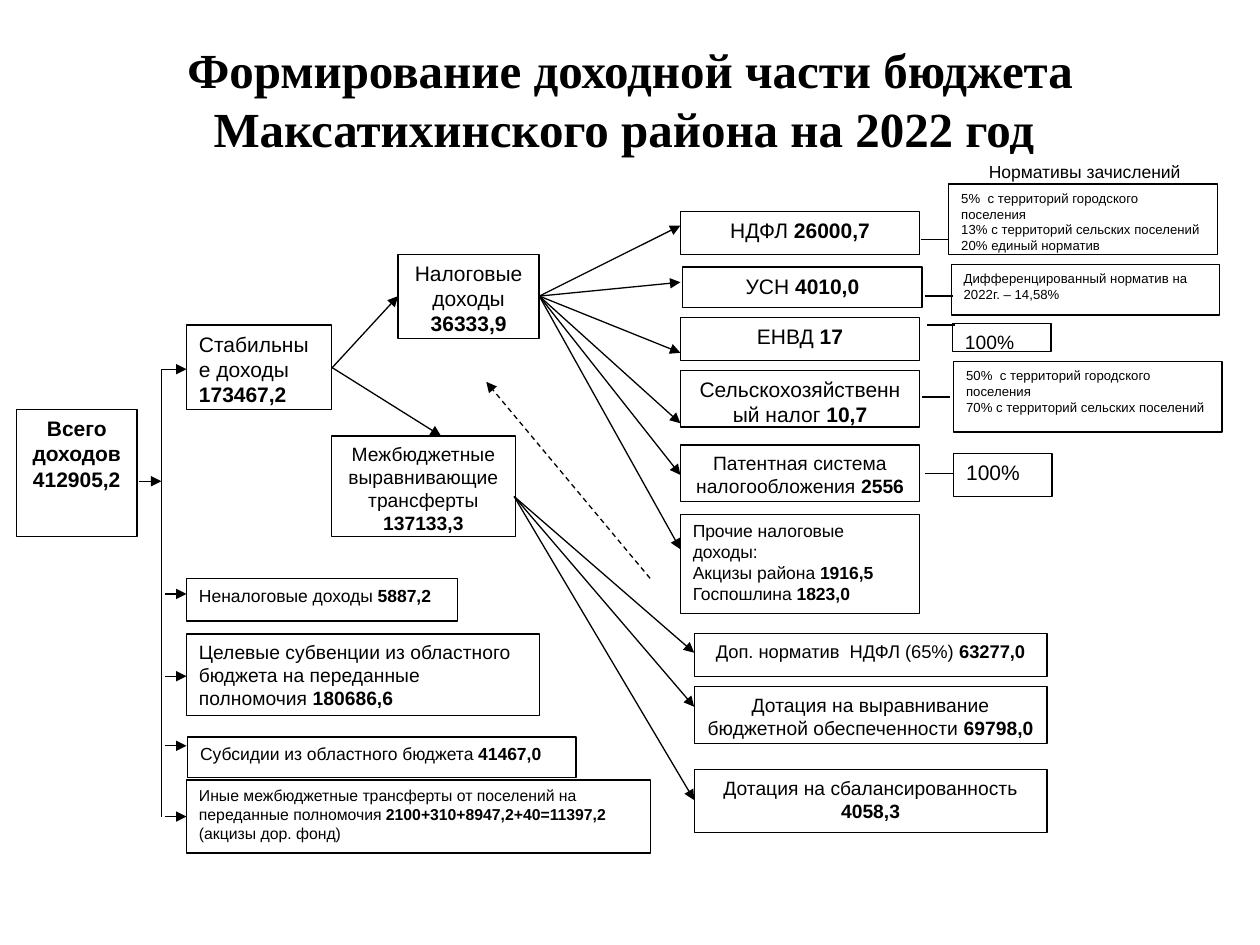
from dataclasses import dataclass

import pptx
import pptx.dml.color
import pptx.enum.dml
import pptx.enum.shapes
import pptx.enum.text
import pptx.oxml
import pptx.oxml.ns
import pptx.util

Pt = pptx.util.Pt
LEFT = pptx.enum.text.PP_ALIGN.LEFT
CENTER = pptx.enum.text.PP_ALIGN.CENTER


@dataclass(frozen=True)
class Theme:
    ink = pptx.dml.color.RGBColor(0, 0, 0)
    paper = pptx.dml.color.RGBColor(255, 255, 255)
    title_font = "Times New Roman"
    body_font = "Arial"
    title = 28
    large = 12
    medium = 11
    norm_extra = 10.5
    small = 10
    note = 9
    tiny = 7.5
    line = 0.75


THEME = Theme()


@dataclass(frozen=True)
class Box:
    left: float
    top: float
    width: float
    height: float

    def inner(self, dx, dy, width, height):
        return Box(self.left + dx, self.top + dy, width, height)

    def point(self, dx, dy):
        return self.left + dx, self.top + dy

    def lengths(self):
        return Pt(self.left), Pt(self.top), Pt(self.width), Pt(self.height)


def write(frame, text, size, align, font=THEME.body_font):
    """Newlines part paragraphs; asterisks enclose bold runs."""
    frame.word_wrap = True
    for number, line in enumerate(text.split("\n")):
        para = frame.add_paragraph() if number else frame.paragraphs[0]
        para.alignment = align
        for index, part in enumerate(line.split("*")):
            if part:
                span = para.add_run()
                span.text = part
                span.font.name = font
                span.font.size = Pt(size)
                span.font.bold = index % 2 == 1
                span.font.color.rgb = THEME.ink


def add_block(page, box, text, size, align=LEFT, outline=THEME.ink):
    block = page.shapes.add_shape(
        pptx.enum.shapes.MSO_SHAPE.RECTANGLE, *box.lengths())
    block.shadow.inherit = False
    block.fill.solid()
    block.fill.fore_color.rgb = THEME.paper
    block.line.color.rgb = outline
    block.line.width = Pt(THEME.line)
    block.text_frame.vertical_anchor = pptx.enum.text.MSO_ANCHOR.TOP
    write(block.text_frame, text, size, align)


def add_line(page, start, end, arrow=True, dashed=False):
    line = page.shapes.add_connector(
        pptx.enum.shapes.MSO_CONNECTOR.STRAIGHT,
        *(Pt(value) for value in (*start, *end)))
    line.line.color.rgb = THEME.ink
    line.line.width = Pt(THEME.line)
    if dashed:
        line.line.dash_style = pptx.enum.dml.MSO_LINE.DASH
    if arrow:
        tail = pptx.oxml.parse_xml(
            f'<a:tailEnd {pptx.oxml.ns.nsdecls("a")} type="triangle"/>')
        line.line._get_or_add_ln().append(tail)
    properties = line._element.spPr
    properties.append(pptx.oxml.parse_xml(
        f'<a:effectLst {pptx.oxml.ns.nsdecls("a")}/>'))


def add_title(page, box):
    frame = page.shapes.add_textbox(*box.lengths()).text_frame
    frame.vertical_anchor = pptx.enum.text.MSO_ANCHOR.MIDDLE
    write(frame, "*Формирование доходной части бюджета "
          "Максатихинского района на 2022 год *",
          THEME.title, CENTER, THEME.title_font)


def add_total(page, box):
    """Total income with the trunk line that leads to its parts."""
    add_block(page, box.inner(0, 49, 69, 72.7),
              "*Всего доходов 412905,2*", THEME.large, CENTER)
    trunk = box.width
    add_line(page, box.point(trunk, 26), box.point(trunk, 281.6), arrow=False)
    add_line(page, box.point(trunk, 26), box.point(trunk + 14.4, 26))
    add_line(page, box.point(69.8, 90), box.point(trunk, 90))


def add_stable_income(page, box):
    """Stable income and the two groups it splits into."""
    add_block(page, box.inner(0, 40.4, 82.8, 48.2),
              "Стабильные доходы *173467,2*", THEME.large)
    add_block(page, box.inner(120.9, 0, 80.6, 48.2),
              "Налоговые доходы *36333,9*", THEME.large, CENTER)
    add_block(page, box.inner(82.8, 103.7, 105.1, 57.6),
              "Межбюджетные выравнивающие трансферты *137133,3*",
              THEME.medium, CENTER)
    add_line(page, box.point(82.8, 65.2), box.point(120.9, 23.8))
    add_line(page, box.point(82.8, 64.4), box.point(145.4, 103.7))


def add_other_income(page, box):
    # top, width, height, shift, arrow height, size, text
    rows = [
        (0, 154.8, 24.5, 0, 8.9, THEME.small, "Неналоговые доходы *5887,2*"),
        (31.7, 201.6, 46.8, 0, 24.2, THEME.medium,
         "Целевые субвенции из областного бюджета на переданные "
         "полномочия *180686,6*"),
        (90.7, 221.8, 23, 0.7, 5, THEME.small,
         "Субсидии из областного бюджета *41467,0*"),
        (115.2, 265, 41.8, 0, 20.9, THEME.note,
         "Иные межбюджетные трансферты от поселений на переданные "
         "полномочия *2100+310+8947,2+40=11397,2* (акцизы дор. фонд)"),
    ]
    for top, width, height, shift, entry, size, text in rows:
        add_block(page, box.inner(shift, top, width, height), text, size)
        add_line(page, box.point(-12.2, top + entry), box.point(0, top + entry))


def add_fan(page, box, source, rows):
    """Column of blocks, each reached by an arrow from one source point."""
    for shift, top, height, entry, size, align, text in rows:
        add_block(page, box.inner(shift, top, box.width, height),
                  text, size, align)
        add_line(page, source, box.point(0, top + entry))


def add_taxes(page, box, source):
    # shift, top, height, arrow height, size, alignment, text
    add_fan(page, box, source, [
        (0, 0, 24.5, 7.9, THEME.large, CENTER, "НДФЛ *26000,7*"),
        (1.4, 31.6, 23, 8.7, THEME.large, CENTER, "УСН *4010,0*"),
        (0, 60.4, 24.5, 20.2, THEME.large, CENTER, "ЕНВД *17*"),
        (0, 90.7, 32.4, 30.2, THEME.large, CENTER,
         "Сельскохозяйственный налог *10,7*"),
        (0, 133.2, 32.4, 17.2, THEME.medium, CENTER,
         "Патентная система налогообложения *2556*"),
        (0, 172.8, 56.9, 20.1, THEME.small, LEFT,
         "Прочие налоговые  доходы:\nАкцизы района *1916,5*\n"
         "Госпошлина *1823,0*"),
    ])


def add_transfers(page, box, source):
    add_fan(page, box, source, [
        (0, 0, 24.5, 10.8, THEME.norm_extra, CENTER,
         "Доп. норматив  НДФЛ (65%) *63277,0*"),
        (0, 30.2, 32.4, 11.5, THEME.medium, CENTER,
         "Дотация на выравнивание бюджетной обеспеченности *69798,0*"),
        (0, 77.7, 36, 17.3, THEME.medium, CENTER,
         "Дотация на сбалансированность *4058,3*"),
    ])


def add_norms(page, box):
    """Shares of each tax that the budget receives."""
    add_block(page, box.inner(15.8, 0, 128.9, 15.8),
              "Нормативы зачислений", THEME.small, outline=THEME.paper)
    wide, narrow = box.width, 56.2
    # left, top, width, height, link left, link top, size, text
    rows = [
        (0, 16.5, wide, 40.3, -15.9, 48.2, THEME.tiny,
         "5%  с территорий городского поселения\n"
         "13% с территорий сельских поселений\n20% единый норматив"),
        (1.4, 62.6, wide, 28.8, -13.7, 80.6, THEME.tiny,
         "Дифференцированный норматив на 2022г. – 14,58%"),
        (2.1, 96.4, narrow, 15.8, -12.2, 97.2, THEME.medium, "100%"),
        (2.8, 118, wide, 40.3, -15.2, 138.2, THEME.tiny,
         "50%  с территорий городского поселения\n"
         "70% с территорий сельских поселений"),
        (2.8, 170.6, narrow, 24.5, -13.7, 182.1, THEME.large, "100%"),
    ]
    for left, top, width, height, link, level, size, text in rows:
        add_block(page, box.inner(left, top, width, height), text, size)
        add_line(page, box.point(link, level), box.point(link + 16, level),
                 arrow=False)


def main():
    deck = pptx.Presentation()
    deck.slide_width, deck.slide_height = Pt(720), Pt(540)
    page = deck.slides.add_slide(deck.slide_layouts[6])
    add_title(page, Box(36, 21.6, 648, 69.8))
    add_total(page, Box(9.4, 185, 82.8, 281.6))
    add_stable_income(page, Box(106.6, 145.4, 201.5, 161.3))
    add_other_income(page, Box(106.6, 330.5, 265, 157))
    add_taxes(page, Box(388.8, 121, 136.8, 229.7), (308.2, 169.2))
    add_transfers(page, Box(396.7, 362.2, 201.6, 113.7), (293.8, 283.7))
    add_norms(page, Box(542.2, 88.6, 153.4, 195.1))
    add_line(page, (371.5, 330.5), (277.9, 218.2), dashed=True)
    deck.save("out.pptx")


if __name__ == "__main__":
    main()
